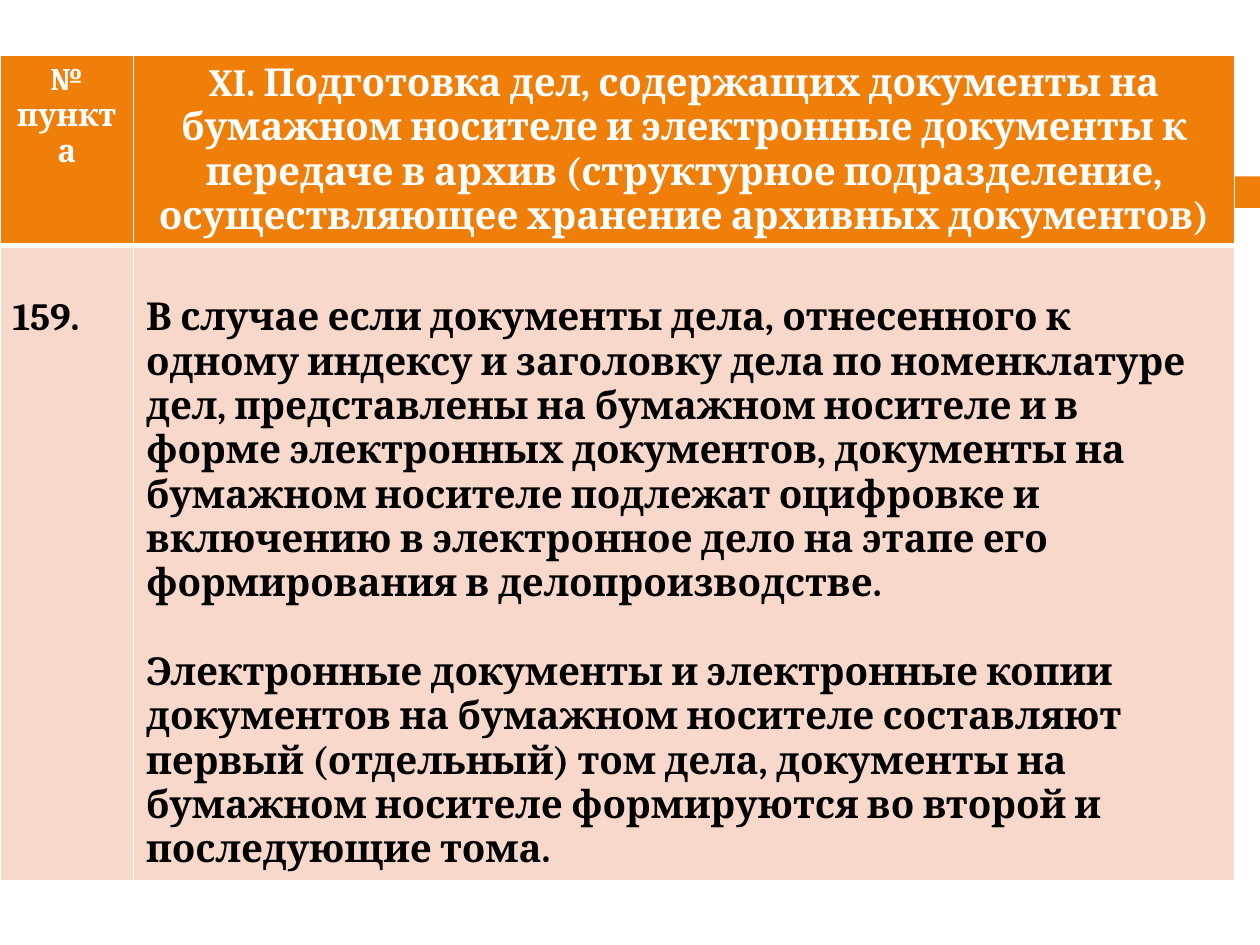
from lxml import etree
from pptx import Presentation
from pptx.dml.color import RGBColor
from pptx.enum.shapes import MSO_SHAPE
from pptx.enum.text import PP_ALIGN
from pptx.oxml.ns import qn
from pptx.util import Inches, Pt

RECT = MSO_SHAPE.RECTANGLE
LEFT, MID = PP_ALIGN.LEFT, PP_ALIGN.CENTER

THEME = {
    "font": "Cambria", "small": 18, "large": 22,
    "red": "9F2936", "orange": "F07F09", "pink": "F9D8CC",
    "white": "FFFFFF", "black": "000000",
}

BARS = [(0, 0.58, "red"), (0.65, 9.35, "orange")]
BAR_TOP, BAR_HIGH = 1.4, 0.25

HEAD = [
    ("№ пункта", "small"),
    ("XI. Подготовка дел, содержащих документы на бумажном носителе и "
     "электронные документы к передаче в архив (структурное подразделение, "
     "осуществляющее хранение архивных документов)", "large"),
]
BODY = [
    ["159."],
    ["В случае если документы дела, отнесенного к одному индексу и заголовку "
     "дела по номенклатуре дел, представлены на бумажном носителе и в форме "
     "электронных документов, документы на бумажном носителе подлежат "
     "оцифровке и включению в электронное дело на этапе его формирования "
     "в делопроизводстве.",
     "Электронные документы и электронные копии документов на бумажном "
     "носителе составляют первый (отдельный) том дела, документы на бумажном "
     "носителе формируются во второй и последующие тома."],
]
TABLE_TOP = 0.44
COLS, ROWS = [1.06, 8.74], [1.5, 5.04]
GAP = 25.3  # one text line, in points
PAD = 0.05


def tint(name):
    return RGBColor.from_string(THEME[name])


def add_bar(slide, left, wide, hue):
    bar = slide.shapes.add_shape(
        RECT, Inches(left), Inches(BAR_TOP), Inches(wide), Inches(BAR_HIGH))
    bar.shadow.inherit = False
    bar.fill.solid()
    bar.fill.fore_color.rgb = tint(hue)
    bar.line.fill.background()


def set_edges(cell, widths):
    """Draw white cell borders; widths maps side letters to points."""
    props = cell._tc.get_or_add_tcPr()
    for spot, (side, width) in enumerate(widths.items()):
        line = etree.Element(qn("a:ln" + side), w=str(Pt(width)))
        fill = etree.SubElement(line, qn("a:solidFill"))
        etree.SubElement(fill, qn("a:srgbClr"), val=THEME["white"])
        props.insert(spot, line)


def fill_cell(cell, paras, size, ink, back, align, edges):
    cell.fill.solid()
    cell.fill.fore_color.rgb = tint(back)
    set_edges(cell, edges)
    frame = cell.text_frame
    for num, text in enumerate(paras):
        para = frame.add_paragraph() if num else frame.paragraphs[0]
        para.alignment = align
        if num:
            para.space_before = Pt(GAP)
        run = para.add_run()
        run.text = text
        look = {"name": THEME["font"], "size": Pt(THEME[size]), "bold": True}
        for key, value in look.items():
            setattr(run.font, key, value)
        run.font.color.rgb = tint(ink)


def add_grid(slide):
    grid = slide.shapes.add_table(
        len(ROWS), len(COLS), 0, Inches(TABLE_TOP),
        Inches(sum(COLS)), Inches(sum(ROWS))).table
    for col, wide in zip(grid.columns, COLS):
        col.width = Inches(wide)
    for row, high in zip(grid.rows, ROWS):
        row.height = Inches(high)
    for num, (text, size) in enumerate(HEAD):
        fill_cell(grid.cell(0, num), [text], size, "white", "orange", MID,
                  {"L": 1, "R": 1, "T": 1, "B": 3})
    for num, paras in enumerate(BODY):
        cell = grid.cell(1, num)
        cell.margin_top = Inches(PAD) + Pt(GAP)
        fill_cell(cell, paras, "large", "black", "pink", LEFT,
                  {"L": 1, "R": 1, "T": 3, "B": 1})


def main():
    deck = Presentation()
    deck.slide_width, deck.slide_height = Inches(10), Inches(7.5)
    slide = deck.slides.add_slide(deck.slide_layouts[6])
    for bar in BARS:
        add_bar(slide, *bar)
    add_grid(slide)
    deck.save("out.pptx")


if __name__ == "__main__":
    main()
